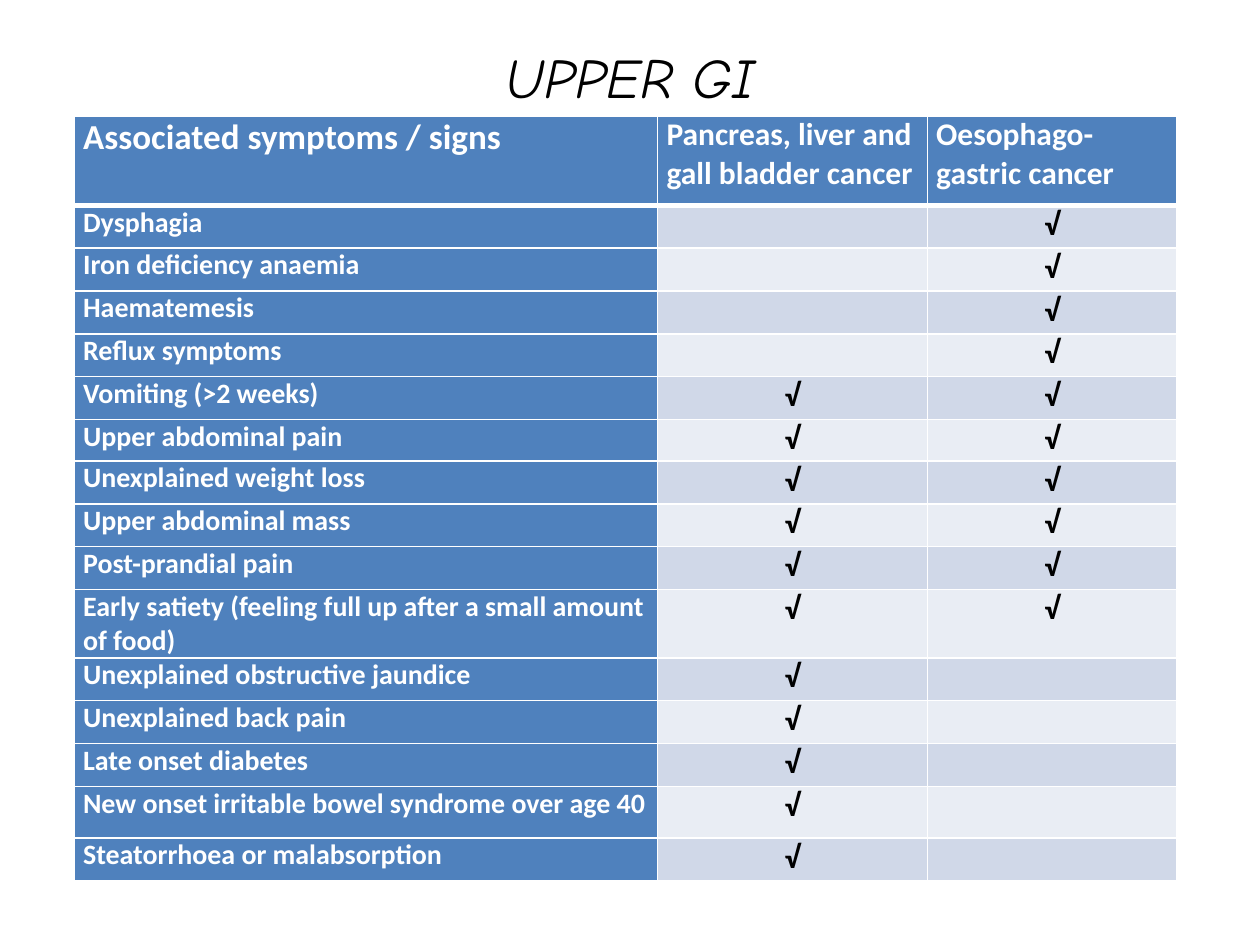
import pptx
import pptx.util
import pptx.dml.color
import pptx.enum.text
import pptx.oxml
import pptx.oxml.ns
from lxml import etree

# Content
TITLE = "UPPER GI"
HEADERS = ["Associated symptoms / signs",
           "Pancreas, liver and gall bladder cancer",
           "Oesophago-gastric cancer"]
TICK = "√"
# Symptom, pancreas / liver / gall bladder, oesophago-gastric
SYMPTOMS = [
    ("Dysphagia", False, True),
    ("Iron deficiency anaemia", False, True),
    ("Haematemesis", False, True),
    ("Reflux symptoms", False, True),
    ("Vomiting (>2 weeks)", True, True),
    ("Upper abdominal pain", True, True),
    ("Unexplained weight loss", True, True),
    ("Upper abdominal mass", True, True),
    ("Post-prandial pain", True, True),
    ("Early satiety (feeling full up after a small amount of food)", True, True),
    ("Unexplained obstructive jaundice", True, False),
    ("Unexplained back pain", True, False),
    ("Late onset diabetes", True, False),
    ("New onset irritable bowel syndrome over age 40", True, False),
    ("Steatorrhoea or malabsorption", True, False),
]

THEME = {
    "title_font": "Comic Neue", "body_font": "Calibri",
    "text": "000000", "light": "FFFFFF", "head": "4F81BD",
    "bands": ["D0D8E8", "E9EDF4"],
    "title_size": 32, "head_sizes": [20, 18, 18], "label_size": 16, "tick_size": 18,
}

# Table grid, in inches
COLUMNS = [4.63, 2.14, 1.98]
HEAD_ROW, ROW = 0.71, 0.34
SPECIAL_ROWS = {6: 0.33, 10: 0.37, 14: 0.41}
LEFT, TOP, WIDTH, HEIGHT = 0.59, 0.92, 8.74, 6.09

Inches, Pt = pptx.util.Inches, pptx.util.Pt
CENTER = pptx.enum.text.PP_ALIGN.CENTER
LEFT_ALIGN = pptx.enum.text.PP_ALIGN.LEFT


def rgb(value):
    return pptx.dml.color.RGBColor.from_string(value)


def style_run(r, font, size, color, bold=False, italic=False):
    r.font.name, r.font.size = font, Pt(size)
    r.font.bold, r.font.italic = bold, italic
    r.font.color.rgb = rgb(color)


def set_borders(cell, bottom=1, top=1):
    tcPr = cell._tc.get_or_add_tcPr()
    widths = [("lnL", 1), ("lnR", 1), ("lnT", top), ("lnB", bottom)]
    for i, (side, width) in enumerate(widths):
        ln = etree.Element(pptx.oxml.ns.qn(f"a:{side}"), w=str(Pt(width)))
        fill = etree.SubElement(ln, pptx.oxml.ns.qn("a:solidFill"))
        etree.SubElement(fill, pptx.oxml.ns.qn("a:srgbClr"), val=THEME["light"])
        tcPr.insert(i, ln)


def fill_cell(cell, text, fill, size, color, align=LEFT_ALIGN):
    cell.fill.solid()
    cell.fill.fore_color.rgb = rgb(fill)
    cell.margin_left = cell.margin_right = Inches(0.07)
    cell.margin_top = cell.margin_bottom = 0
    if text:
        p = cell.text_frame.paragraphs[0]
        p.text = text
        p.alignment = align
        p.space_before = p.space_after = Pt(6)
        style_run(p.runs[0], THEME["body_font"], size, color, bold=True)


prs = pptx.Presentation()
prs.slide_width, prs.slide_height = Inches(10), Inches(7.5)
s = prs.slides.add_slide(prs.slide_layouts[5])

# Title
title = s.shapes.title
title.left, title.top = Inches(0.5), Inches(0.3)
title.width, title.height = Inches(9), Inches(0.61)
tf = title.text_frame
tf.text = TITLE
tf.vertical_anchor = pptx.enum.text.MSO_ANCHOR.MIDDLE
tf.paragraphs[0].alignment = CENTER
style_run(tf.paragraphs[0].runs[0], THEME["title_font"], THEME["title_size"],
          THEME["text"], italic=True)

# Table grid
table = s.shapes.add_table(len(SYMPTOMS) + 1, len(COLUMNS), Inches(LEFT), Inches(TOP),
                           Inches(WIDTH), Inches(HEIGHT)).table
for column, width in zip(table.columns, COLUMNS):
    column.width = Inches(width)
for i, row in enumerate(table.rows):
    row.height = Inches(SPECIAL_ROWS.get(i, ROW) if i else HEAD_ROW)

# Header row
for c, (text, size) in enumerate(zip(HEADERS, THEME["head_sizes"])):
    cell = table.cell(0, c)
    fill_cell(cell, text, THEME["head"], size, THEME["light"])
    set_borders(cell, bottom=3)

# Symptom rows
for i, (symptom, *ticks) in enumerate(SYMPTOMS, start=1):
    fill_cell(table.cell(i, 0), symptom, THEME["head"], THEME["label_size"], THEME["light"])
    for c, ticked in enumerate(ticks, start=1):
        fill_cell(table.cell(i, c), TICK if ticked else "", THEME["bands"][(i - 1) % 2],
                  THEME["tick_size"], THEME["text"], CENTER)
    for c in range(len(COLUMNS)):
        set_borders(table.cell(i, c), top=3 if i == 1 else 1)

prs.save("out.pptx")
